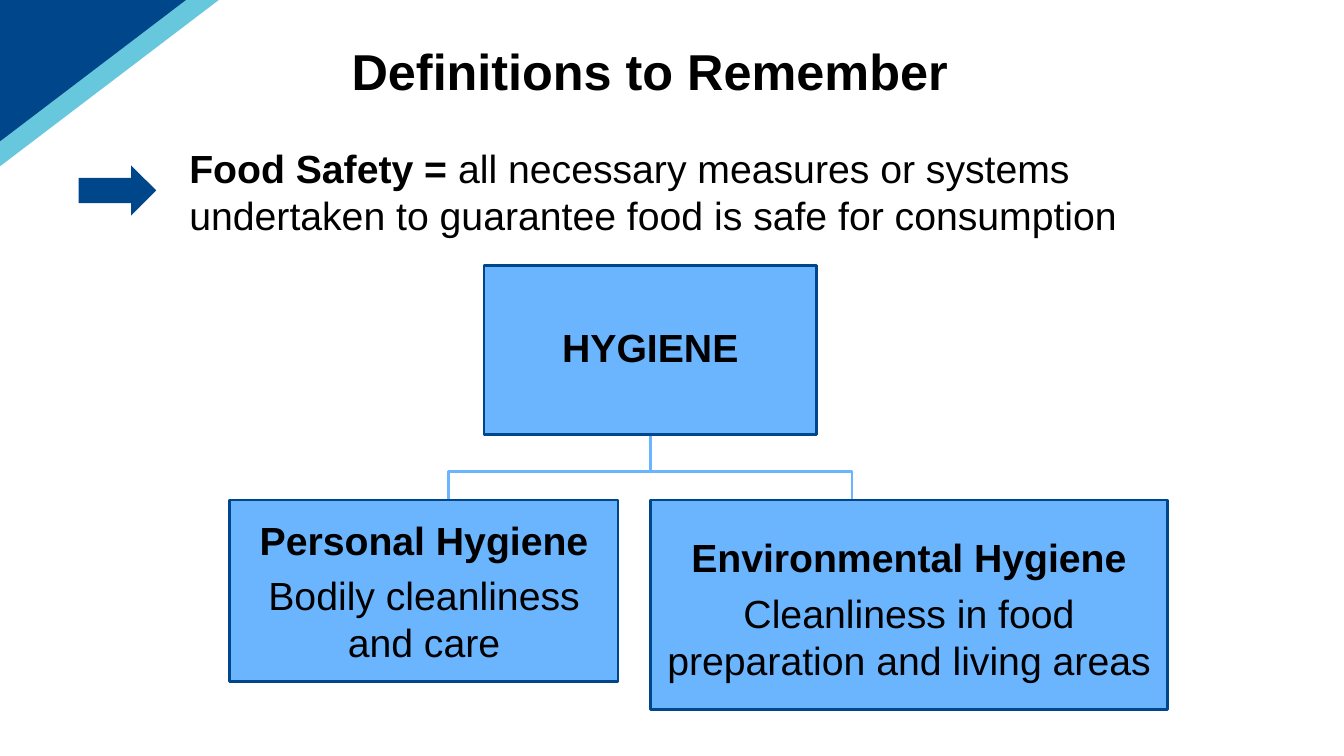
import dataclasses
import pptx
import pptx.util
import pptx.dml.color
import pptx.enum.shapes
import pptx.enum.text
import pptx.oxml
import pptx.oxml.ns

Inches = pptx.util.Inches
Pt = pptx.util.Pt
Anchor = pptx.enum.text.MSO_ANCHOR
Align = pptx.enum.text.PP_ALIGN
Kind = pptx.enum.shapes.MSO_SHAPE


@dataclasses.dataclass(frozen=True)
class Theme:
    """Colours, font and type sizes of the slide."""
    navy: str = "00468B"
    teal: str = "00A2C7"
    sky: str = "6BB5FF"
    ink: str = "000000"
    font: str = "Arial"
    head: int = 36
    body: int = 28
    line: int = 2


THEME = Theme()


def rgb(code):
    """Turn a hex code into a colour."""
    return pptx.dml.color.RGBColor.from_string(code)


def paint(shape, fill=None, line=None):
    """Set fill and line, leaving out whichever is not given."""
    shape.shadow.inherit = False
    if fill:
        shape.fill.solid()
        shape.fill.fore_color.rgb = rgb(fill)
    else:
        shape.fill.background()
    if line:
        shape.line.color.rgb = rgb(line)
        shape.line.width = Pt(THEME.line)
    else:
        shape.line.fill.background()


def write(shape, paras, size, align, anchor, pads, gap=0, lead=1.0):
    """Fill a shape with paragraphs of (text, bold) runs."""
    frame = shape.text_frame
    frame.word_wrap = True
    frame.vertical_anchor = anchor
    frame.margin_left = frame.margin_right = Inches(pads[0])
    frame.margin_top, frame.margin_bottom = Inches(pads[1]), Inches(pads[2])
    for num, runs in enumerate(paras):
        para = frame.add_paragraph() if num else frame.paragraphs[0]
        para.alignment = align
        para.line_spacing = lead
        para.space_before = para.space_after = Pt(gap)
        for text, bold in runs:
            run = para.add_run()
            run.text = text
            run.font.name = THEME.font
            run.font.size = Pt(size)
            run.font.bold = bold
            run.font.color.rgb = rgb(THEME.ink)


def trace(slide, points, close):
    """Draw an outline through points given in inches."""
    first, *rest = [(Inches(x), Inches(y)) for x, y in points]
    pen = slide.shapes.build_freeform(*first)
    pen.add_line_segments(rest, close=close)
    return pen.convert_to_shape()


def corner(slide, left, top, width, height):
    """Place the pale and dark triangles in the top left corner."""
    for part, fill, alpha in ((1, THEME.teal, 60), (0.85, THEME.navy, 100)):
        shape = trace(slide, [(left, top), (left + width * part, top),
                              (left, top + height * part)], True)
        paint(shape, fill)
        if alpha < 100:
            tint = shape.fill._xPr.find(".//" + pptx.oxml.ns.qn("a:srgbClr"))
            tint.append(pptx.oxml.parse_xml(
                f'<a:alpha {pptx.oxml.ns.nsdecls("a")} val="{alpha * 1000}"/>'))


def title(slide, left, top, width, height):
    """Place the heading."""
    box = slide.shapes.add_textbox(*map(Inches, (left, top, width, height)))
    write(box, [[("Definitions to Remember", True)]], THEME.head,
          Align.CENTER, Anchor.MIDDLE, (0.1, 0.05, 0.05), lead=0.9)


def safety(slide, left, top, width, height):
    """Place the arrow and the definition beside it."""
    arrow = slide.shapes.add_shape(
        Kind.RIGHT_ARROW, Inches(left), Inches(top + 0.26), Inches(0.77), Inches(0.5))
    paint(arrow, THEME.navy)
    box = slide.shapes.add_textbox(
        Inches(left + 1), Inches(top), Inches(width - 1), Inches(height))
    write(box, [[("Food Safety =", True),
                 (" all necessary measures or systems undertaken to "
                  "guarantee food is safe for consumption", False)]],
          THEME.body, Align.LEFT, Anchor.TOP, (0.1, 0.05, 0.05))


def node(slide, box, paras, pad=0.02, gap=0, lead=1.0):
    """Place one box of the tree."""
    shape = slide.shapes.add_shape(Kind.RECTANGLE, *map(Inches, box))
    paint(shape, THEME.sky, THEME.navy)
    write(shape, paras, THEME.body, Align.CENTER, Anchor.MIDDLE,
          (0.02, pad, 0.02), gap, lead)


def tree(slide, left, top, width, height):
    """Place the hygiene tree: links, root and two leaves."""
    hub, low = left + 4.17, top + 2.33
    for side in (-2, 2):
        link = trace(slide, [(hub, top + 1.7), (hub, top + 2.05),
                             (hub + side, top + 2.05), (hub + side, top + 2.4)], False)
        paint(link, line=THEME.sky)
    node(slide, (hub - 1.65, top, 3.3, 1.68), [[("HYGIENE", True)]], lead=0.9)
    node(slide, (left, low, 3.85, 1.8),
         [[("Personal Hygiene", True)], [("Bodily cleanliness and care", False)]], gap=3)
    node(slide, (hub, low, width - 4.17, height - 2.33),
         [[("Environmental Hygiene", True)],
          [("Cleanliness in food preparation and living areas", False)]], 0.09, 3)


def main():
    """Build and save the slide."""
    deck = pptx.Presentation()
    deck.slide_width, deck.slide_height = Inches(13.33), Inches(7.5)
    slide = deck.slides.add_slide(deck.slide_layouts[6])
    corner(slide, 0, 0, 2.17, 1.65)
    title(slide, 2.09, 0.11, 8.71, 1.25)
    tree(slide, 2.28, 2.63, 9.3, 4.41)
    safety(slide, 0.78, 1.38, 11.1, 1.51)
    deck.save("out.pptx")


if __name__ == "__main__":
    main()
